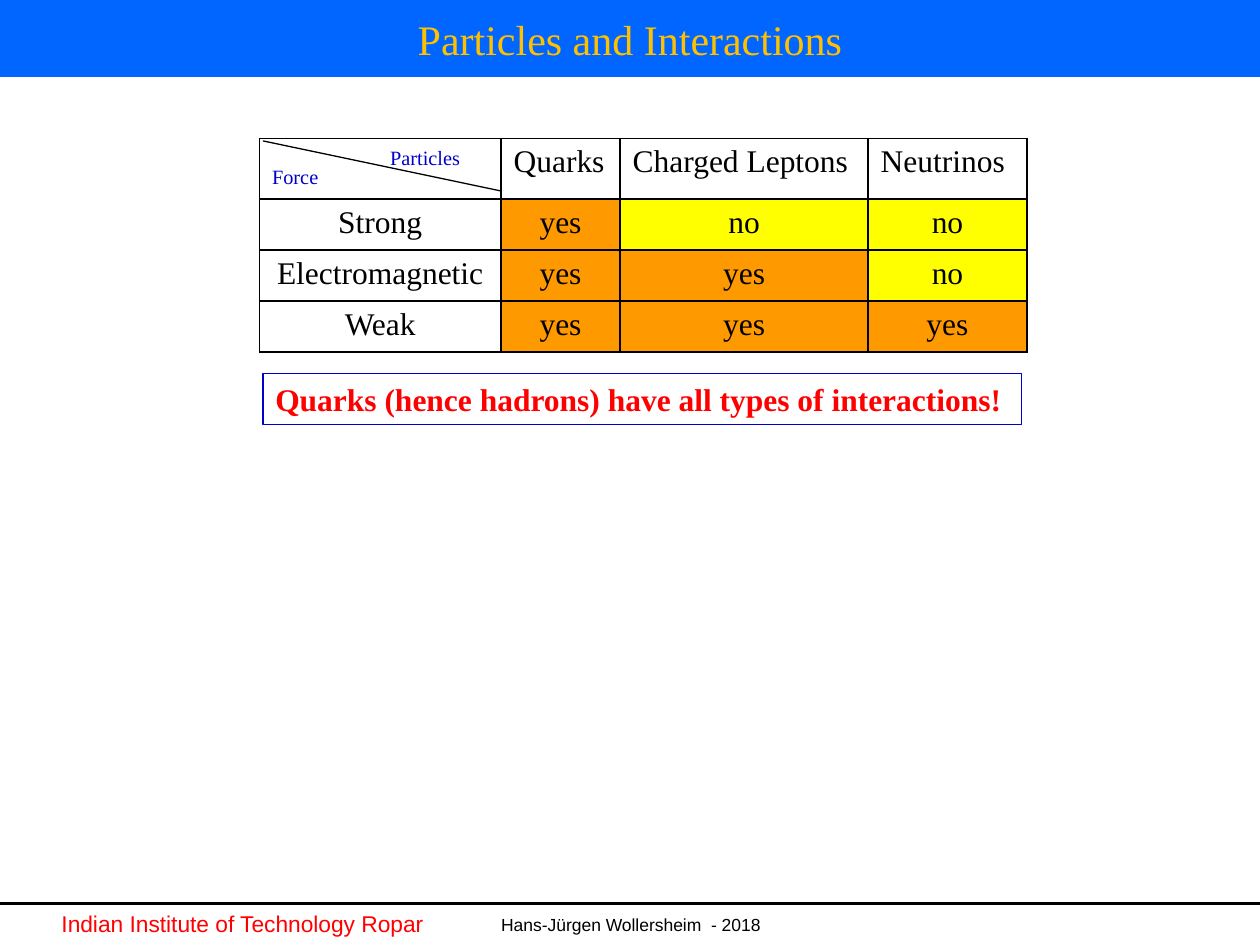
from lxml.etree import SubElement as Sub
from pptx import Presentation as Deck
from pptx.dml.color import RGBColor as Rgb
from pptx.enum.shapes import MSO_CONNECTOR as Link, MSO_SHAPE as Form
from pptx.enum.text import MSO_ANCHOR as Anchor, MSO_AUTO_SIZE as Fit, PP_ALIGN as Align
from pptx.oxml.ns import qn
from pptx.util import Cm, Pt

SERIF, SANS = "Times New Roman", "Arial"
BLACK, RED, BLUE = "000000", "FF0000", "0000CC"
ORANGE, YELLOW = "FF9900", "FFFF00"


def tint(fill, code, alpha=None):
    fill.solid()
    fill.fore_color.rgb = Rgb.from_string(code)
    if alpha:
        node = fill._xPr.find(".//" + qn("a:srgbClr"))
        Sub(node, qn("a:alpha"), val=str(alpha * 1000))


class Page:
    """Hold the text style and the current slide, and draw its elements."""

    def __init__(self, deck):
        self.slide = deck.slides.add_slide(deck.slide_layouts[5])
        self.style = {"name": SERIF, "size": Pt(18), "bold": False}

    def run(self, par, text, code=BLACK, base=0, **extra):
        run = par.add_run()
        run.text = text
        for key, value in {**self.style, **extra}.items():
            setattr(run.font, key, value)
        tint(run.font.fill, code)
        if base:
            run._r.get_or_add_rPr().set("baseline", str(base * 1000))

    def put(self, frame, text, code, align=Align.LEFT, form=None, **extra):
        for key, value in (form or {}).items():
            setattr(frame, key, value)
        par = frame.paragraphs[0]
        par.alignment = align
        self.run(par, text, code, **extra)

    def title(self, box, text, back, code):
        shape = self.slide.shapes.title
        for key, value in zip(("left", "top", "width", "height"), box):
            setattr(shape, key, Cm(value))
        tint(shape.fill, back)
        form = {"vertical_anchor": Anchor.MIDDLE, "auto_size": Fit.NONE}
        self.put(shape.text_frame, text, code, Align.CENTER, form, size=Pt(24))

    def label(self, box, text, code, align=Align.LEFT, form=None, **extra):
        shape = self.slide.shapes.add_textbox(*map(Cm, box))
        self.put(shape.text_frame, text, code, align, form, **extra)

    def frame(self, box, text, code, edge, form, **extra):
        shape = self.slide.shapes.add_shape(Form.RECTANGLE, *map(Cm, box))
        shape.shadow.inherit = False
        shape.fill.background()
        tint(shape.line.fill, edge)
        shape.line.width = Pt(0.75)
        self.put(shape.text_frame, text, code, form=form, **extra)

    def line(self, ends, width):
        link = self.slide.shapes.add_connector(Link.STRAIGHT, *map(Cm, ends))
        tint(link.line.fill, BLACK)
        link.line.width = Pt(width)
        Sub(link._element.spPr, qn("a:effectLst"))

    def border(self, cell):
        props = cell._tc.get_or_add_tcPr()
        for side in "LRTB":
            edge = Sub(props, qn("a:ln" + side), w=str(Pt(1)))
            Sub(Sub(edge, qn("a:solidFill")), qn("a:srgbClr"), val=BLACK)

    def table(self, left, top, cols, high, rows, fills):
        size = Cm(left), Cm(top), Cm(sum(cols)), Cm(high * len(rows))
        grid = self.slide.shapes.add_table(len(rows), len(cols), *size).table
        grid.first_row = grid.horz_banding = False
        for col, width in zip(grid.columns, cols):
            col.width = Cm(width)
        for y, texts in enumerate(rows):
            for x, text in enumerate(texts):
                cell = grid.cell(y, x)
                self.border(cell)
                cell.fill.background()
                if y and x:
                    tint(cell.fill, *fills[text, x == 1])
                if text:
                    align = Align.CENTER if y else Align.LEFT
                    self.put(cell.text_frame, text, BLACK, align)
        return grid

    def corner(self, cell, low, high, stop):
        par = cell.text_frame.paragraphs[0]
        tabs = Sub(par._p.get_or_add_pPr(), qn("a:tabLst"))
        Sub(tabs, qn("a:tab"), pos=str(Cm(stop)), algn="l")
        self.run(par, low, BLUE, -25, size=Pt(20))
        self.run(par, "\t")
        self.run(par, high, BLUE, 30, size=Pt(20))


def main():
    deck = Deck()
    deck.slide_width, deck.slide_height = Cm(25.4), Cm(19.05)
    page = Page(deck)
    snug = {"word_wrap": False, "auto_size": Fit.SHAPE_TO_FIT_TEXT}

    page.line((0, 18.21, 25.4, 18.21), 1.5)
    page.label((0.03, 18.31, 25.37, 0.74), "Hans-Jürgen Wollersheim  - 2018", BLACK,
               Align.CENTER, {"word_wrap": True}, name=SANS, size=Pt(10))
    page.label((0.99, 18.21, 7.9, 0.81), "Indian Institute of Technology Ropar", RED,
               form=snug, name=SANS, size=Pt(13))
    page.title((0, 0, 25.4, 1.55), "Particles and Interactions", "0066FF", "FFC000")

    rows = [
        ("", "Quarks", "Charged Leptons", "Neutrinos"),
        ("Strong", "yes", "no", "no"),
        ("Electromagnetic", "yes", "yes", "no"),
        ("Weak", "yes", "yes", "yes"),
    ]
    fills = {("yes", True): (ORANGE,), ("yes", False): (ORANGE, 50),
             ("no", False): (YELLOW, 50)}
    grid = page.table(5.23, 2.79, (4.87, 2.4, 5, 3.2), 1.03, rows, fills)
    page.corner(grid.cell(0, 0), "Force", "Particles", 2.38)
    page.line((5.3, 2.84, 10.1, 3.85), 0.75)
    page.frame((5.3, 7.53, 15.3, 1.03),
               "Quarks (hence hadrons) have all types of interactions!",
               RED, BLUE, snug, bold=True)
    deck.save("out.pptx")


if __name__ == "__main__":
    main()
